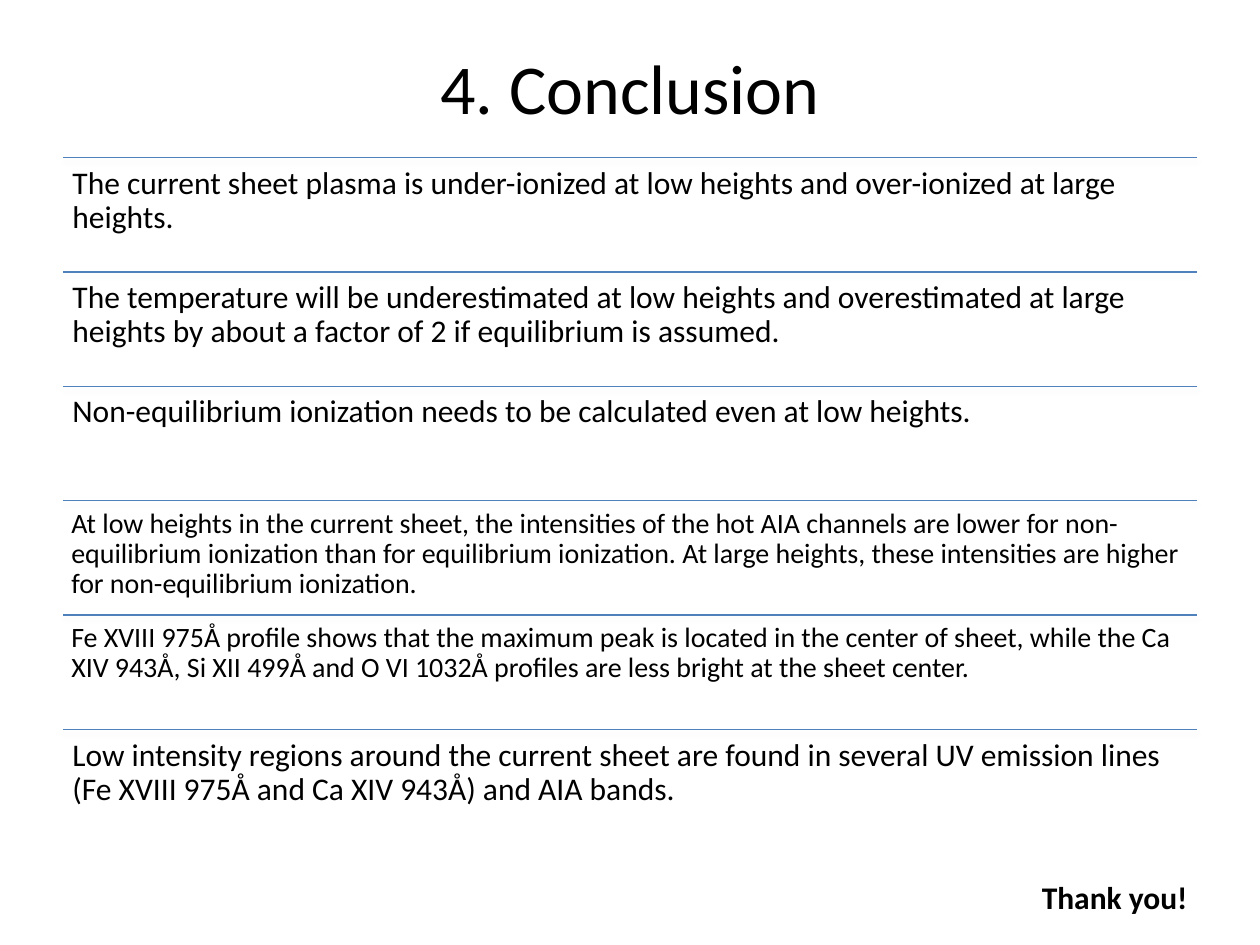
from lxml.etree import SubElement
from pptx import Presentation
from pptx.dml.color import RGBColor
from pptx.enum.shapes import MSO_CONNECTOR
from pptx.enum.text import MSO_ANCHOR, MSO_AUTO_SIZE, PP_ALIGN
from pptx.oxml.ns import qn
from pptx.util import Inches, Pt

BLACK = RGBColor(0x00, 0x00, 0x00)
RULE_BLUE = RGBColor(0x4F, 0x81, 0xBD)
LEFT, WIDTH = 0.5, 9
FIRST_TOP, LAST_TOP = 1.25, 5.79

CONCLUSIONS = [
    ("The current sheet plasma is under-ionized at low heights and "
     "over-ionized at large heights.", 18),
    ("The temperature will be underestimated at low heights and overestimated "
     "at large heights by about a factor of 2 if equilibrium is assumed.", 18),
    ("Non-equilibrium ionization needs to be calculated even at low heights.", 18),
    ("At low heights in the current sheet, the intensities of the hot AIA "
     "channels are lower for non-equilibrium ionization than for equilibrium "
     "ionization. At large heights, these intensities are higher for "
     "non-equilibrium ionization.", 16),
    ("Fe XVIII 975Å profile shows that the maximum peak is located in the "
     "center of sheet, while the Ca XIV 943Å, Si XII 499Å and O VI 1032Å "
     "profiles are less bright at the sheet center.", 16),
    ("Low intensity regions around the current sheet are found in several UV "
     "emission lines (Fe XVIII 975Å and Ca XIV 943Å) and AIA bands.", 18),
]


def write(frame, text, size, bold=False):
    """Set the frame's single paragraph in black Calibri and return it."""
    frame.text = text
    paragraph = frame.paragraphs[0]
    font = paragraph.runs[0].font
    font.name, font.size, font.bold = "Calibri", Pt(size), bold
    font.color.rgb = BLACK
    return paragraph


def add_soft_shadow(connector):
    effects = SubElement(connector._element.spPr, qn("a:effectLst"))
    shadow = SubElement(effects, qn("a:outerShdw"), blurRad=str(Pt(3.1)),
                        dist=str(Pt(1.6)), dir="5400000", rotWithShape="0")
    color = SubElement(shadow, qn("a:srgbClr"), val=str(BLACK))
    SubElement(color, qn("a:alpha"), val="38000")


prs = Presentation()
prs.slide_width, prs.slide_height = Inches(10), Inches(7.5)
slide = prs.slides.add_slide(prs.slide_layouts[5])

heading = slide.shapes.title
heading.left, heading.top = Inches(LEFT), Inches(0.3)
heading.width, heading.height = Inches(WIDTH), Inches(0.78)
heading.text_frame.vertical_anchor = MSO_ANCHOR.MIDDLE
write(heading.text_frame, "4. Conclusion", 40).alignment = PP_ALIGN.CENTER

row_height = (LAST_TOP - FIRST_TOP) / (len(CONCLUSIONS) - 1)
for row, (conclusion, size) in enumerate(CONCLUSIONS):
    top = Inches(FIRST_TOP + row * row_height)
    rule = slide.shapes.add_connector(
        MSO_CONNECTOR.STRAIGHT, Inches(LEFT), top, Inches(LEFT + WIDTH), top)
    rule.line.color.rgb = RULE_BLUE
    rule.line.width = Pt(0.75)
    add_soft_shadow(rule)

    statement = slide.shapes.add_textbox(
        Inches(LEFT), top, Inches(WIDTH), Inches(row_height))
    frame = statement.text_frame
    frame.word_wrap = True
    # The inset follows the text size
    frame.margin_left = frame.margin_right = Pt(size * 0.3)
    frame.margin_top = frame.margin_bottom = Pt(size * 0.3)
    write(frame, conclusion, size).line_spacing = 0.9

thanks = slide.shapes.add_textbox(
    Inches(8.17), Inches(6.92), Inches(1.37), Inches(0.4))
thanks.text_frame.word_wrap = False
thanks.text_frame.auto_size = MSO_AUTO_SIZE.SHAPE_TO_FIT_TEXT
write(thanks.text_frame, "Thank you!", 18, bold=True)

prs.save("out.pptx")
